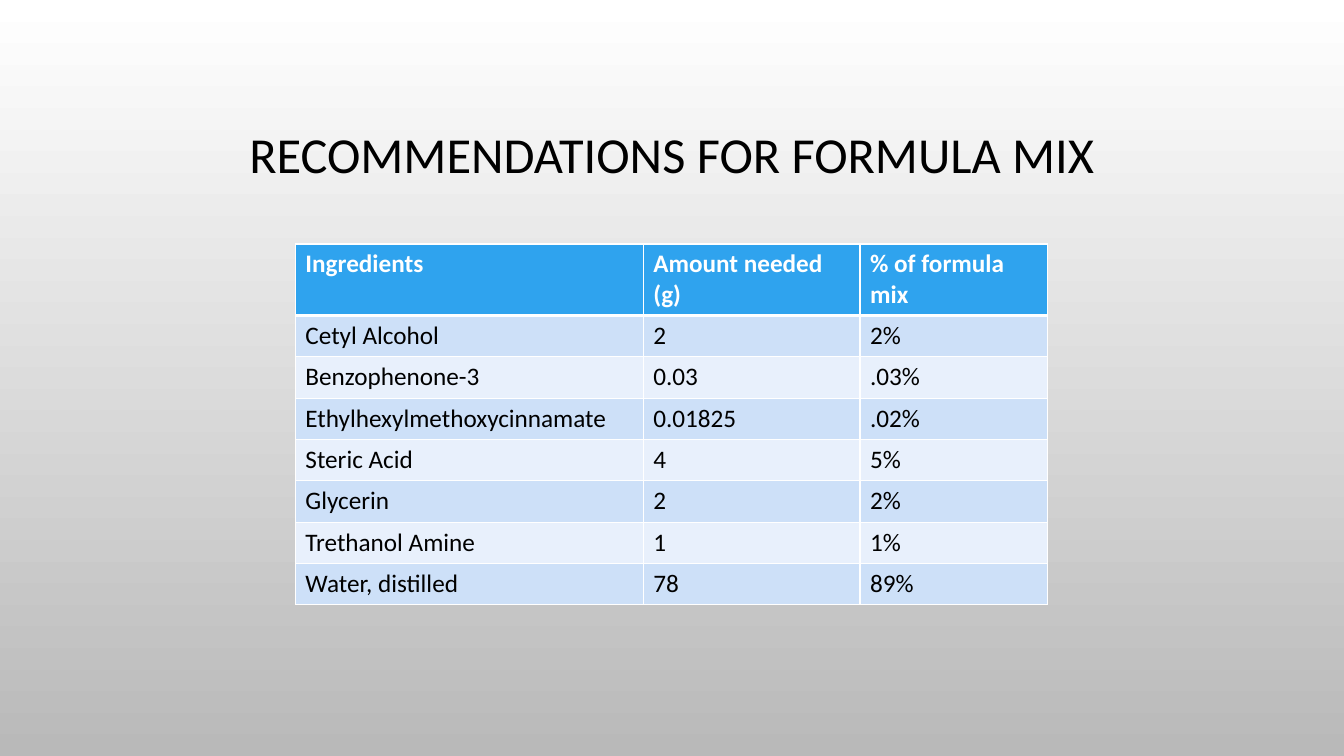
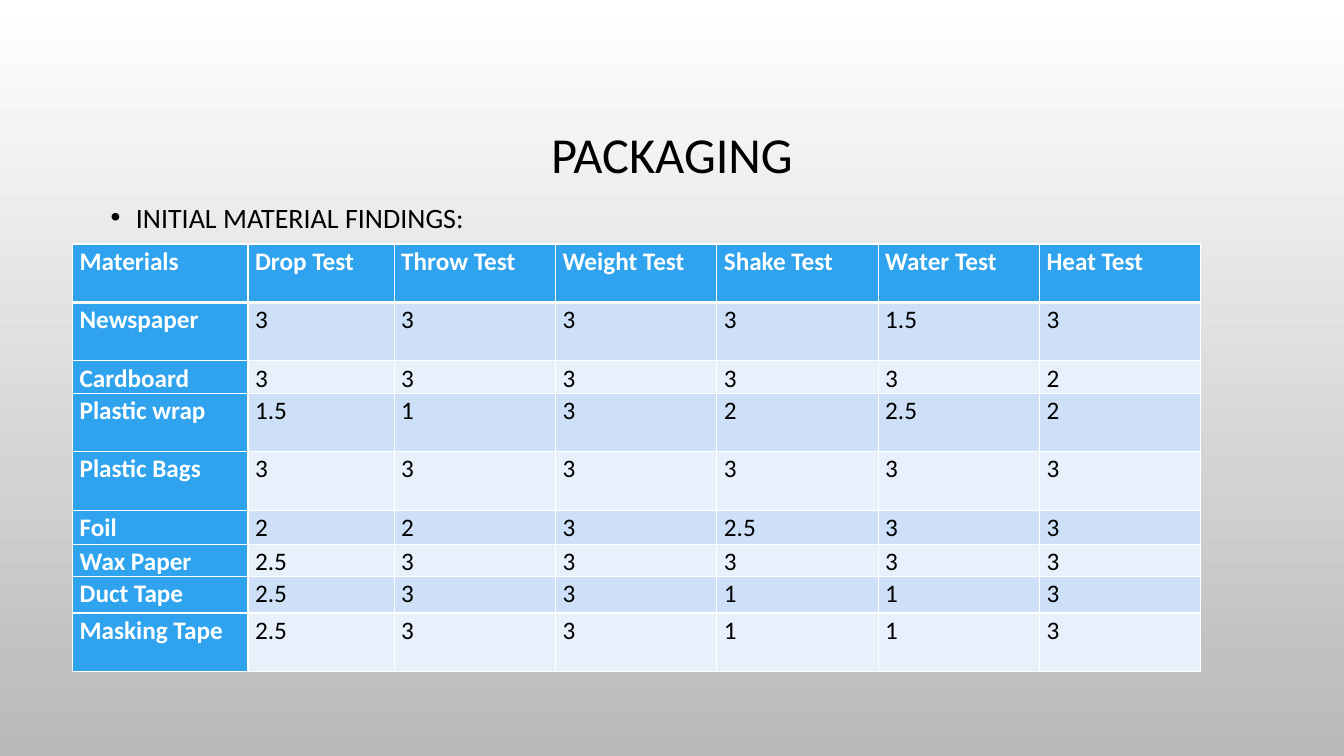
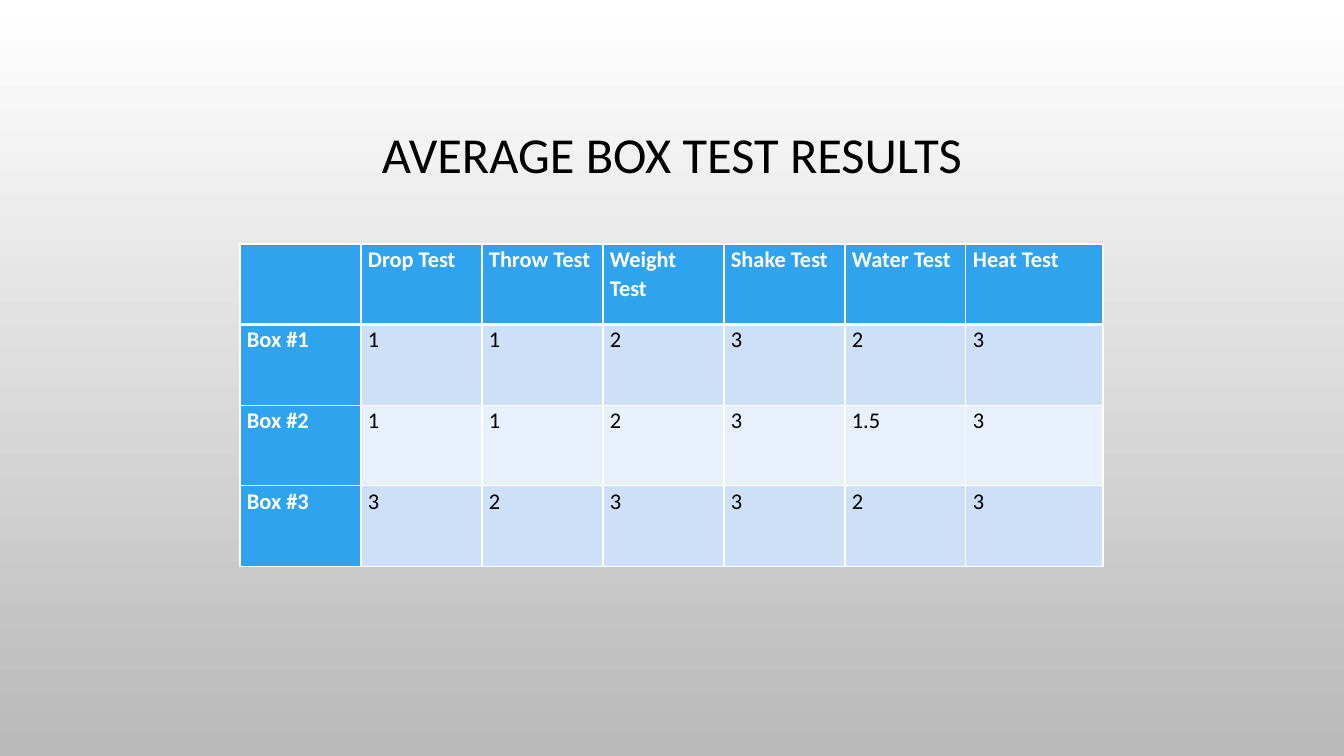
from dataclasses import dataclass

from lxml.etree import SubElement
from pptx import Presentation
from pptx.dml.color import RGBColor as Color
from pptx.enum.text import MSO_ANCHOR as Anchor, MSO_AUTO_SIZE as AutoSize, PP_ALIGN as Align
from pptx.oxml import parse_xml
from pptx.oxml.ns import nsdecls, qn
from pptx.util import Inches, Pt


@dataclass(frozen=True)
class Theme:
    font: str = "Calibri"
    ink: str = "000000"
    white: str = "FFFFFF"
    backdrop_end: str = "B9B9B9"
    header: str = "2FA3EE"
    bands: tuple = ("E8F0FC", "CDE0F8")
    title_size: int = 36
    bullet_size: int = 20
    table_size: int = 18
    small_table_size: int = 16
    rule: int = 1
    header_rule: int = 3


class Slides:
    """Holds the theme, the deck and the current slide."""

    def __init__(self, theme):
        self.theme = theme
        self.deck = Presentation()
        self.deck.slide_width, self.deck.slide_height = Inches(13.33), Inches(7.5)
        self.page = None
        # Shared backdrop: white at the top, grey at the bottom
        fill = self.deck.slide_master.background.fill
        fill.gradient()
        fill.gradient_angle = 270
        for stop, colour in zip(fill.gradient_stops, (theme.white, theme.backdrop_end)):
            stop.color.rgb = Color.from_string(colour)

    def add_span(self, para, text, size, colour, bold=False):
        span = para.add_run()
        span.text = text
        span.font.name = self.theme.font
        span.font.size = Pt(size)
        span.font.bold = bold
        span.font.color.rgb = Color.from_string(colour)

    def add_page(self, title):
        self.page = self.deck.slides.add_slide(self.deck.slide_layouts[5])
        box = self.page.shapes.title
        box.left, box.top, box.width, box.height = map(Inches, (1, 0.68, 11.33, 1.75))
        frame = box.text_frame
        frame.auto_size = AutoSize.NONE
        frame.vertical_anchor = Anchor.MIDDLE
        para = frame.paragraphs[0]
        para.alignment = Align.CENTER
        para.line_spacing = 0.9
        self.add_span(para, title, self.theme.title_size, self.theme.ink)

    def add_bullet(self, text, left, top, width, height):
        box = self.page.shapes.add_textbox(*map(Inches, (left, top, width, height)))
        box.text_frame.word_wrap = True
        para = box.text_frame.paragraphs[0]
        para.line_spacing = 1.2
        props = para._p.get_or_add_pPr()
        props.set("marL", str(Inches(0.25)))
        props.set("indent", str(Inches(-0.25)))
        SubElement(props, qn("a:buFont"), typeface="Arial")
        SubElement(props, qn("a:buChar"), char="•")
        self.add_span(para, text, self.theme.bullet_size, self.theme.ink)

    def add_table(self, rows, left, top, height, widths, heights, size,
                  label_column=True, insets=(0.07, 0), line_spacing=1.07):
        shape = self.page.shapes.add_table(
            len(rows), len(widths), *map(Inches, (left, top, sum(widths), height)))
        table = shape.table
        table.first_col = label_column
        table.horz_banding = False
        for column, width in zip(table.columns, widths):
            column.width = Inches(width)
        for row, row_height in zip(table.rows, heights):
            row.height = Inches(row_height)
        shape.height = Inches(height)

        for r, values in enumerate(rows):
            for c, value in enumerate(values):
                cell = table.cell(r, c)
                is_label = r == 0 or (label_column and c == 0)
                cell.margin_left = cell.margin_right = Inches(insets[0])
                cell.margin_top = cell.margin_bottom = Inches(insets[1])
                cell.fill.solid()
                cell.fill.fore_color.rgb = Color.from_string(
                    self.theme.header if is_label else self.theme.bands[r % 2])
                self.add_borders(cell, r)
                para = cell.text_frame.paragraphs[0]
                para.line_spacing = line_spacing
                if value:
                    colour = self.theme.white if is_label else self.theme.ink
                    self.add_span(para, value, size, colour, is_label)

    def add_borders(self, cell, row):
        # Border lines come before the fill; the rule under the header is thicker
        props = cell._tc.get_or_add_tcPr()
        for place, side in enumerate("LRTB"):
            thick = (row, side) in ((0, "B"), (1, "T"))
            width = Pt(self.theme.header_rule if thick else self.theme.rule)
            props.insert(place, parse_xml(
                f'<a:ln{side} {nsdecls("a")} w="{width}"><a:solidFill>'
                f'<a:srgbClr val="{self.theme.white}"/></a:solidFill></a:ln{side}>'))


TESTS = ["Drop Test", "Throw Test", "Weight Test", "Shake Test", "Water Test", "Heat Test"]
TABLE_TOP = 2.42


def main():
    theme = Theme()
    slides = Slides(theme)

    # Formula mix
    formula = [
        ["Ingredients", "Amount needed (g)", "% of formula mix"],
        ["Cetyl Alcohol", "2", "2%"],
        ["Benzophenone-3", "0.03", ".03%"],
        ["Ethylhexylmethoxycinnamate", "0.01825", ".02%"],
        ["Steric Acid", "4", "5%"],
        ["Glycerin", "2", "2%"],
        ["Trethanol Amine", "1", "1%"],
        ["Water, distilled", "78", "89%"],
    ]
    slides.add_page("RECOMMENDATIONS FOR FORMULA MIX")
    slides.add_table(formula, 2.93, TABLE_TOP, 3.54, [3.45, 2.15, 1.86],
                     [0.41] * len(formula), theme.table_size,
                     label_column=False, insets=(0.1, 0.05), line_spacing=1)

    # Packaging materials
    materials = [
        ["Materials", *TESTS],
        ["Newspaper", "3", "3", "3", "3", "1.5", "3"],
        ["Cardboard", "3", "3", "3", "3", "3", "2"],
        ["Plastic wrap", "1.5", "1", "3", "2", "2.5", "2"],
        ["Plastic Bags", "3", "3", "3", "3", "3", "3"],
        ["Foil", "2", "2", "3", "2.5", "3", "3"],
        ["Wax Paper", "2.5", "3", "3", "3", "3", "3"],
        ["Duct Tape", "2.5", "3", "3", "1", "1", "3"],
        ["Masking Tape", "2.5", "3", "3", "1", "1", "3"],
    ]
    slides.add_page("PACKAGING")
    slides.add_bullet("INITIAL MATERIAL FINDINGS:", 1, 1.87, 11.33, 4.46)
    slides.add_table(materials, 0.72, TABLE_TOP, 4.26, [1.74, 1.45] + [1.6] * 5,
                     [0.58, 0.58, 0.31, 0.58, 0.58, 0.34, 0.31, 0.36, 0.58],
                     theme.table_size)

    # Box averages
    boxes = [
        ["", *TESTS],
        ["Box #1", "1", "1", "2", "3", "2", "3"],
        ["Box #2", "1", "1", "2", "3", "1.5", "3"],
        ["Box #3", "3", "2", "3", "3", "2", "3"],
    ]
    slides.add_page("AVERAGE BOX TEST RESULTS")
    slides.add_table(boxes, 2.38, TABLE_TOP, 3.2, [1.2] * 6 + [1.36],
                     [0.8] * len(boxes), theme.small_table_size)

    slides.deck.save("out.pptx")


if __name__ == "__main__":
    main()
